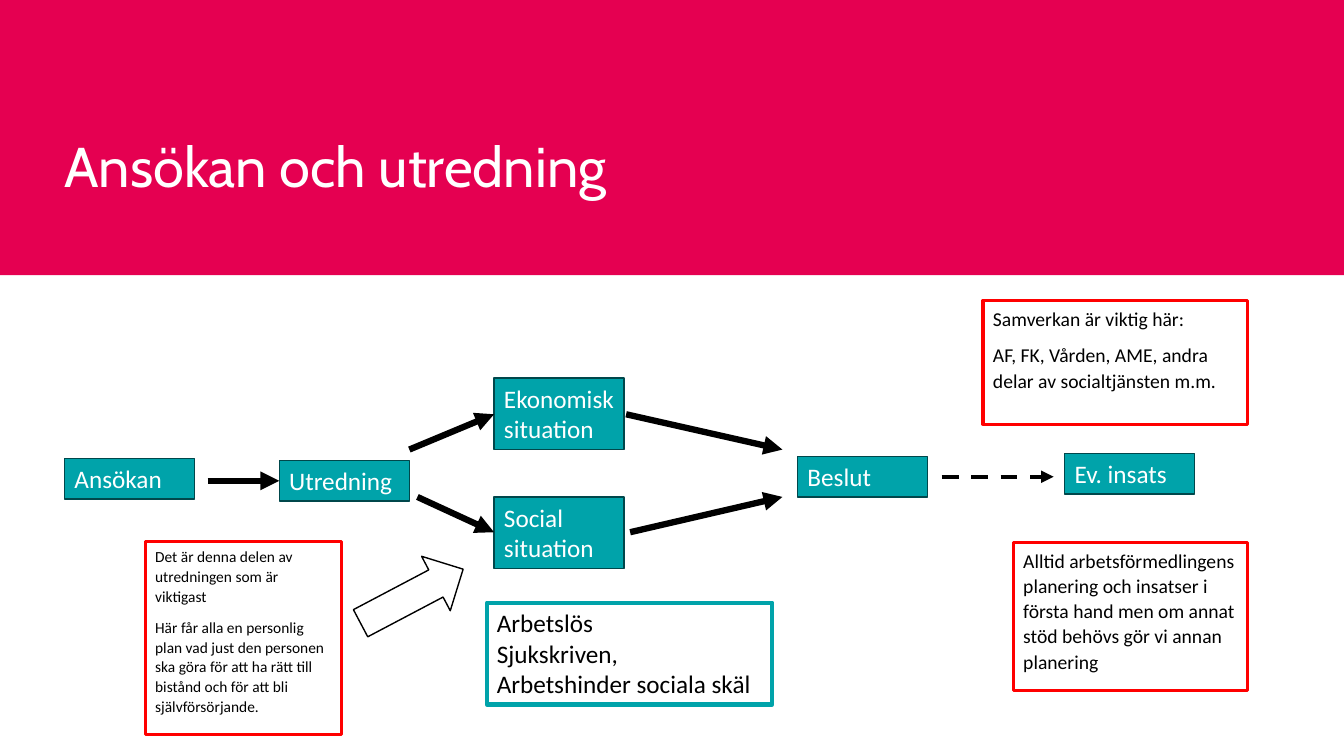
from dataclasses import dataclass

from pptx import Presentation
from pptx.dml.color import RGBColor
from pptx.enum.dml import MSO_LINE
from pptx.enum.shapes import MSO_CONNECTOR, MSO_SHAPE
from pptx.enum.text import MSO_ANCHOR, PP_ALIGN
from pptx.oxml.ns import qn
from pptx.util import Emu, Pt
from lxml import etree

RECTANGLE = MSO_SHAPE.RECTANGLE
BLOCK_ARROW = MSO_SHAPE.RIGHT_ARROW
STRAIGHT = MSO_CONNECTOR.STRAIGHT
DASH = MSO_LINE.DASH
TOP, BOTTOM = MSO_ANCHOR.TOP, MSO_ANCHOR.BOTTOM
LEFT = PP_ALIGN.LEFT

EMU_PER_PX = 9144  # 100 px to the inch


@dataclass(frozen=True)
class Theme:
    pink: str = "E50051"
    teal: str = "00A3AA"
    dark_teal: str = "00474B"
    red: str = "FF0000"
    black: str = "000000"
    white: str = "FFFFFF"
    heading_font: str = "Cabin"
    body_font: str = "Calibri"
    title_size: int = 40
    step_size: int = 18
    note_size: int = 14
    small_size: int = 11


THEME = Theme()


@dataclass(frozen=True)
class Step:
    text: str
    left: int
    top: int
    height: int = 40
    width: int = 129


@dataclass(frozen=True)
class Arrow:
    start: tuple[int, int]
    end: tuple[int, int]
    width: float = 4.5
    dashed: bool = False


@dataclass(frozen=True)
class Note:
    text: str
    left: int
    top: int
    width: int
    height: int
    size: int = THEME.note_size
    border: str = THEME.red
    border_width: float = 2.25
    line_spacing: float = 1.07
    space_after: int = 8


STEPS = [
    Step("Ansökan", 64, 455),
    Step("Utredning", 277, 457),
    Step("Social situation", 490, 493, height=71),
    Step("Ekonomisk situation", 490, 375, height=71),
    Step("Beslut", 791, 453),
    Step("Ev. insats", 1056, 450),
]

ARROWS = [
    Arrow((206, 477), (277, 477)),
    Arrow((414, 493), (490, 528)),
    Arrow((406, 446), (490, 411)),
    Arrow((625, 528), (776, 493)),
    Arrow((621, 411), (776, 446)),
    Arrow((934, 473), (1045, 473), width=3, dashed=True),
]

NOTES = [
    Note("Alltid arbetsförmedlingens planering och insatser i första hand "
         "men om annat stöd behövs gör vi annan planering",
         1005, 538, 232, 147),
    Note("Arbetslös\nSjukskriven,\nArbetshinder sociala skäl",
         483, 598, 283, 101, size=THEME.step_size, border=THEME.teal,
         border_width=3, line_spacing=1.0, space_after=0),
    Note("Det är denna delen av utredningen som är viktigast\n"
         "Här får alla en personlig plan vad just den personen ska göra "
         "för att ha rätt till bistånd och för att bli självförsörjande.",
         144, 537, 195, 192, size=THEME.small_size),
    Note("Samverkan är viktig här:\n"
         "AF, FK, Vården, AME, andra delar av socialtjänsten m.m.",
         975, 298, 262, 123),
]


def px(length: int) -> Emu:
    return Emu(length * EMU_PER_PX)


def rgb(colour: str) -> RGBColor:
    return RGBColor.from_string(colour)


def write_text(shape, text: str, *, size: int, colour: str,
               font: str = THEME.body_font, anchor=TOP,
               line_spacing: float = 1.0, space_after: int = 0) -> None:
    frame = shape.text_frame
    frame.word_wrap = True
    frame.vertical_anchor = anchor
    frame.text = text
    for para in frame.paragraphs:
        para.alignment = LEFT
        para.line_spacing = line_spacing
        para.space_after = Pt(space_after)
        para.font.name = font
        para.font.size = Pt(size)
        para.font.color.rgb = rgb(colour)


def add_box(page, left: int, top: int, width: int, height: int, *, fill: str,
            border: str | None = None, border_width: float = 1,
            kind=RECTANGLE):
    box = page.shapes.add_shape(kind, px(left), px(top), px(width), px(height))
    box.shadow.inherit = False
    box.fill.solid()
    box.fill.fore_color.rgb = rgb(fill)
    if border:
        box.line.color.rgb = rgb(border)
        box.line.width = Pt(border_width)
    else:
        box.line.fill.background()
    return box


def add_step(page, step: Step) -> None:
    box = add_box(page, step.left, step.top, step.width, step.height,
                  fill=THEME.teal, border=THEME.dark_teal)
    write_text(box, step.text, size=THEME.step_size, colour=THEME.white)


def add_note(page, note: Note) -> None:
    box = add_box(page, note.left, note.top, note.width, note.height,
                  fill=THEME.white, border=note.border,
                  border_width=note.border_width)
    write_text(box, note.text, size=note.size, colour=THEME.black,
               line_spacing=note.line_spacing, space_after=note.space_after)


def add_arrow(page, arrow: Arrow) -> None:
    connector = page.shapes.add_connector(
        STRAIGHT, *map(px, arrow.start + arrow.end))
    connector.line.color.rgb = rgb(THEME.black)
    connector.line.width = Pt(arrow.width)
    if arrow.dashed:
        connector.line.dash_style = DASH
    properties = connector.line._get_or_add_ln()
    etree.SubElement(properties, qn("a:tailEnd"), type="triangle")
    etree.SubElement(connector._element.spPr, qn("a:effectLst"))


def add_title(page, text: str) -> None:
    box = page.shapes.add_textbox(px(64), px(101), px(870), px(96))
    frame = box.text_frame
    frame.margin_left = frame.margin_right = 0
    frame.margin_top = frame.margin_bottom = 0
    write_text(box, text, size=THEME.title_size, colour=THEME.white,
               font=THEME.heading_font, anchor=BOTTOM, line_spacing=1.2)


def main() -> None:
    deck = Presentation()
    deck.slide_width, deck.slide_height = px(1333), px(750)
    page = deck.slides.add_slide(deck.slide_layouts[6])

    # Heading band
    add_box(page, 0, 0, 1333, 273, fill=THEME.pink)
    add_title(page, "Ansökan och utredning")

    # Process flow
    for step in STEPS:
        add_step(page, step)
    for arrow in ARROWS:
        add_arrow(page, arrow)

    # Notes and the block arrow pointing at the social situation
    for note in NOTES:
        add_note(page, note)
    pointer = add_box(page, 351, 561, 115, 61, fill=THEME.white,
                      border=THEME.black, kind=BLOCK_ARROW)
    pointer.rotation = 332.2

    deck.save("out.pptx")


if __name__ == "__main__":
    main()
